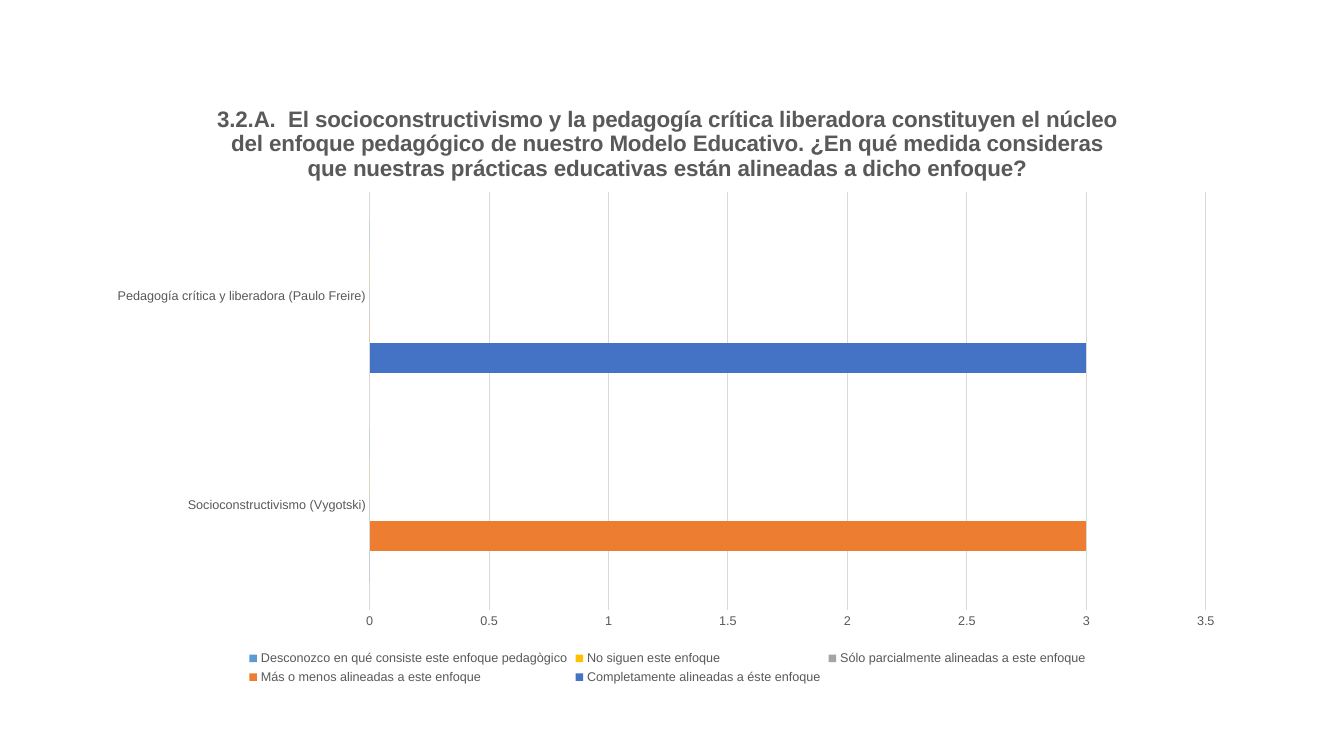
from dataclasses import dataclass

from pptx import Presentation
from pptx.chart.data import CategoryChartData
from pptx.dml.color import RGBColor
from pptx.enum.chart import XL_CHART_TYPE, XL_LEGEND_POSITION, XL_TICK_MARK
from pptx.oxml import parse_xml
from pptx.oxml.ns import nsdecls, qn
from pptx.util import Inches, Pt

BAR = XL_CHART_TYPE.BAR_CLUSTERED
BOTTOM = XL_LEGEND_POSITION.BOTTOM
NO_TICK = XL_TICK_MARK.NONE


@dataclass(frozen=True)
class Theme:
    face: str = "Arial"
    text: str = "595959"
    grid: str = "D9D9D9"
    bars: tuple = ("4472C4", "ED7D31", "A5A5A5", "FFC000", "5B9BD5")
    title: float = 16
    label: float = 9
    line: float = 0.75


TITLE = (
    "3.2.A.  El socioconstructivismo y la pedagogía crítica liberadora "
    "constituyen el núcleo del enfoque pedagógico de nuestro Modelo Educativo. "
    "¿En qué medida consideras que nuestras prácticas educativas están "
    "alineadas a dicho enfoque?"
)
TOPICS = (
    "Socioconstructivismo (Vygotski)",
    "Pedagogía crítica y liberadora (Paulo Freire)",
)
ANSWERS = {
    "Completamente alineadas a éste enfoque": (0, 3),
    "Más o menos alineadas a este enfoque": (3, 0),
    "Sólo parcialmente alineadas a este enfoque": (0, 0),
    "No siguen este enfoque": (0, 0),
    "Desconozco en qué consiste este enfoque pedagògico": (0, 0),
}


class Board:
    def __init__(self, slide, theme):
        self.slide = slide
        self.theme = theme

    def font(self, font, size, bold=False):
        font.name = self.theme.face
        font.size = Pt(size)
        font.bold = bold
        font.color.rgb = RGBColor.from_string(self.theme.text)

    def rule(self, line):
        line.color.rgb = RGBColor.from_string(self.theme.grid)
        line.width = Pt(self.theme.line)

    def title(self, chart, text):
        chart.has_title = True
        frame = chart.chart_title.text_frame
        frame.text = text
        self.font(frame.paragraphs[0].runs[0].font, self.theme.title, True)
        chart.chart_title.include_in_layout = False

    def axes(self, chart):
        for axis in (chart.category_axis, chart.value_axis):
            axis.major_tick_mark = axis.minor_tick_mark = NO_TICK
            self.font(axis.tick_labels.font, self.theme.label)
        self.rule(chart.category_axis.format.line)
        values = chart.value_axis
        values.format.line.fill.background()
        values.has_major_gridlines = True
        self.rule(values.major_gridlines.format.line)

    def legend(self, chart):
        chart.has_legend = True
        chart.legend.position = BOTTOM
        chart.legend.include_in_layout = False
        self.font(chart.legend.font, self.theme.label)

    def place(self, chart, left, top, width, height):
        """Fix the inner plot area, in fractions of the chart."""
        area = chart.plots[0]._element.getparent()
        for old in area.findall(qn("c:layout")):
            area.remove(old)
        sides = zip("xywh", (left, top, width, height))
        marks = '<c:xMode val="edge"/><c:yMode val="edge"/>'
        marks += "".join(f'<c:{side} val="{size}"/>' for side, size in sides)
        area.insert(0, parse_xml(
            f'<c:layout {nsdecls("c")}><c:manualLayout>'
            f'<c:layoutTarget val="inner"/>{marks}'
            f'</c:manualLayout></c:layout>'))

    def bars(self, topics, answers, left, top, width, height):
        data = CategoryChartData()
        data.categories = topics
        for name, values in answers.items():
            data.add_series(name, values)
        chart = self.slide.shapes.add_chart(
            BAR, Inches(left), Inches(top), Inches(width), Inches(height), data
        ).chart
        self.font(chart.font, self.theme.label)
        plot = chart.plots[0]
        plot.gap_width = 182
        plot.vary_by_categories = False
        for series, color in zip(plot.series, self.theme.bars):
            series.format.fill.solid()
            series.format.fill.fore_color.rgb = RGBColor.from_string(color)
        self.axes(chart)
        self.legend(chart)
        return chart


def main():
    deck = Presentation()
    deck.slide_width = Inches(13.33)
    deck.slide_height = Inches(7.5)
    board = Board(deck.slides.add_slide(deck.slide_layouts[6]), Theme())
    chart = board.bars(TOPICS, ANSWERS, 0.94, 0.83, 11.36, 6)
    board.title(chart, TITLE)
    board.place(chart, 0.24, 0.18, 0.73, 0.69)
    deck.save("out.pptx")


if __name__ == "__main__":
    main()
